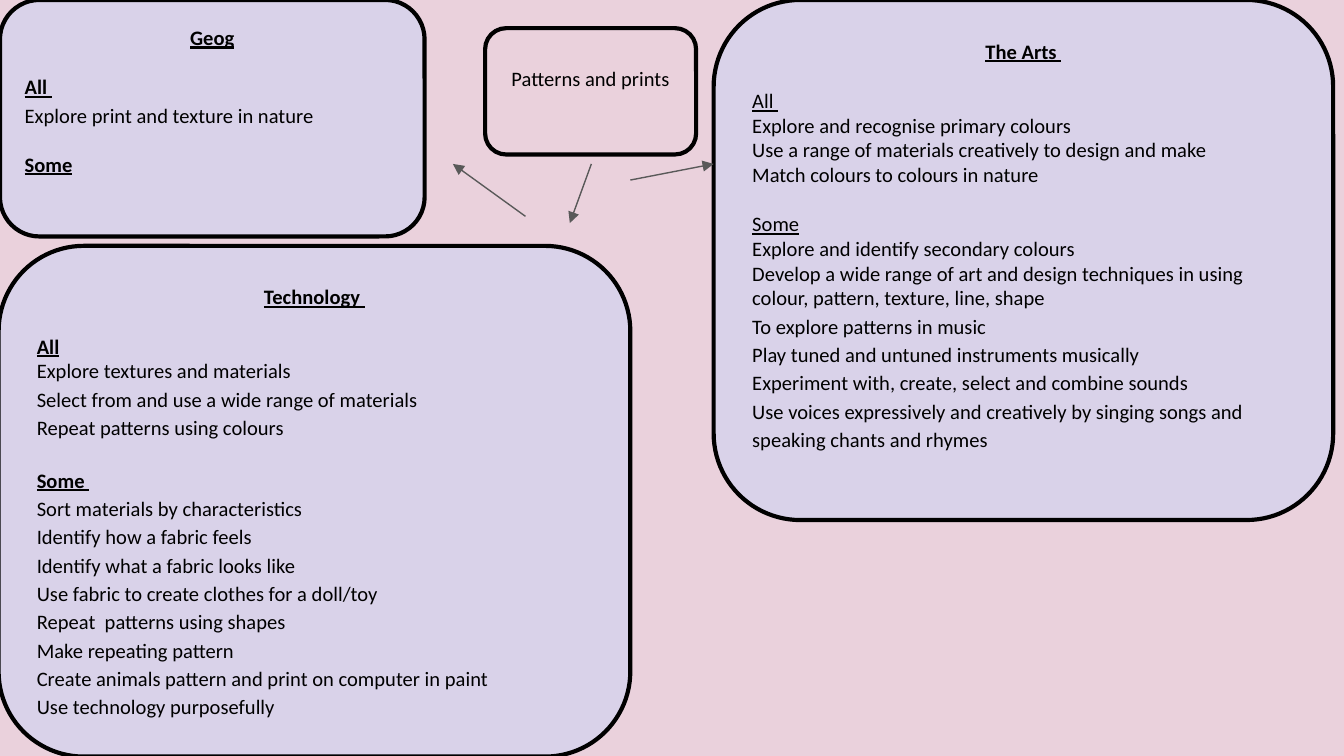
from dataclasses import dataclass

from lxml.etree import SubElement
from pptx import Presentation
from pptx.dml.color import RGBColor
from pptx.enum.shapes import MSO_CONNECTOR, MSO_SHAPE
from pptx.enum.text import MSO_ANCHOR, PP_ALIGN
from pptx.oxml.ns import qn
from pptx.util import Inches, Pt


@dataclass(frozen=True)
class Theme:
    """Colours, font, sizes and line spacing of the slide."""
    background: RGBColor = RGBColor.from_string("EAD1DC")
    panel: RGBColor = RGBColor.from_string("D9D2E9")
    ink: RGBColor = RGBColor.from_string("000000")
    arrow: RGBColor = RGBColor.from_string("595959")
    font: str = "Calibri"
    size: float = 11
    outline: float = 2.25
    arrow_width: float = 0.75
    loose: float = 1.15
    gap: float = 13.2


@dataclass(frozen=True)
class Group:
    """A heading with its single-spaced and loosely spaced lines."""
    heading: str
    tight: tuple = ()
    loose: tuple = ()
    gap: float = Theme.gap


THEME = Theme()

GEOGRAPHY = (
    Group("All ", loose=("Explore print and texture in nature",)),
    Group("Some"),
)

TECHNOLOGY = (
    Group("All", ("Explore textures and materials",), (
        "Select from and use a wide range of materials",
        "Repeat patterns using colours",
    )),
    Group("Some ", loose=(
        "Sort materials by characteristics",
        "Identify how a fabric feels",
        "Identify what a fabric looks like",
        "Use fabric to create clothes for a doll/toy",
        "Repeat  patterns using shapes",
        "Make repeating pattern",
        "Create animals pattern and print on computer in paint",
        "Use technology purposefully",
    ), gap=THEME.gap * THEME.loose),
)

ARTS = (
    Group("All ", (
        "Explore and recognise primary colours",
        "Use a range of materials creatively to design and make",
        "Match colours to colours in nature",
    )),
    Group("Some", (
        "Explore and identify secondary colours",
        "Develop a wide range of art and design techniques in using "
        "colour, pattern, texture, line, shape",
    ), (
        "To explore patterns in music",
        "Play tuned and untuned instruments musically",
        "Experiment with, create, select and combine sounds",
        "Use voices expressively and creatively by singing songs and "
        "speaking chants and rhymes",
    )),
)

ARROWS = (
    ((3.91, 1.61), (3.37, 1.22)),
    ((4.4, 1.22), (4.24, 1.66)),
    ((4.69, 1.34), (5.31, 1.22)),
)


def add_rounded_box(slide, box, fill):
    """Draw an outlined rounded rectangle and return it."""
    shape = slide.shapes.add_shape(MSO_SHAPE.ROUNDED_RECTANGLE, *map(Inches, box))
    shape.shadow.inherit = False
    shape.fill.solid()
    shape.fill.fore_color.rgb = fill
    shape.line.color.rgb = THEME.ink
    shape.line.width = Pt(THEME.outline)
    frame = shape.text_frame
    frame.word_wrap = True
    frame.vertical_anchor = MSO_ANCHOR.TOP
    frame.margin_left = frame.margin_right = Inches(0.1)
    frame.margin_top = frame.margin_bottom = Inches(0.1)
    return shape


def write(paragraph, text, align=PP_ALIGN.LEFT, bold=False, underline=False):
    """Fill a paragraph with text in the theme's type."""
    paragraph.text = text
    paragraph.alignment = align
    for run in paragraph.runs:
        font = run.font
        font.name = THEME.font
        font.size = Pt(THEME.size)
        font.color.rgb = THEME.ink
        font.bold = bold
        font.underline = underline


def add_topic(slide, box):
    """Place the central topic box."""
    frame = add_rounded_box(slide, box, THEME.background).text_frame
    frame.vertical_anchor = MSO_ANCHOR.MIDDLE
    frame.margin_bottom = Inches(0.3)
    write(frame.paragraphs[0], "Patterns and prints", PP_ALIGN.CENTER)


def add_subject(slide, box, title, groups, bold_headings=True):
    """Place a subject panel with its title and groups of aims."""
    frame = add_rounded_box(slide, box, THEME.panel).text_frame
    write(frame.paragraphs[0], title, PP_ALIGN.CENTER, bold=True, underline=True)
    for group in groups:
        heading = frame.add_paragraph()
        write(heading, group.heading, bold=bold_headings, underline=True)
        heading.space_before = Pt(group.gap)
        for lines, spacing in ((group.tight, 1.0), (group.loose, THEME.loose)):
            for line in lines:
                paragraph = frame.add_paragraph()
                write(paragraph, line)
                paragraph.line_spacing = spacing


def add_arrow(slide, start, end):
    """Draw a thin arrow from start to end."""
    connector = slide.shapes.add_connector(
        MSO_CONNECTOR.STRAIGHT, *map(Inches, start + end))
    connector.line.color.rgb = THEME.arrow
    connector.line.width = Pt(THEME.arrow_width)
    properties = connector._element.spPr
    SubElement(properties.find(qn("a:ln")), qn("a:tailEnd"), type="triangle")
    SubElement(properties, qn("a:effectLst"))


def main():
    """Build and save the slide."""
    presentation = Presentation()
    presentation.slide_width = Inches(10)
    presentation.slide_height = presentation.slide_width * 9 // 16
    slide = presentation.slides.add_slide(presentation.slide_layouts[6])
    slide.background.fill.solid()
    slide.background.fill.fore_color.rgb = THEME.background
    add_topic(slide, (3.61, 0.21, 1.57, 0.94))
    add_subject(slide, (-0.01, 1.83, 4.7, 3.8), "Technology ", TECHNOLOGY)
    add_subject(slide, (0, 0, 3.16, 1.76), "Geog", GEOGRAPHY)
    add_subject(slide, (5.31, 0, 4.61, 3.87), "The Arts ", ARTS, bold_headings=False)
    for start, end in ARROWS:
        add_arrow(slide, start, end)
    presentation.save("out.pptx")


if __name__ == "__main__":
    main()
